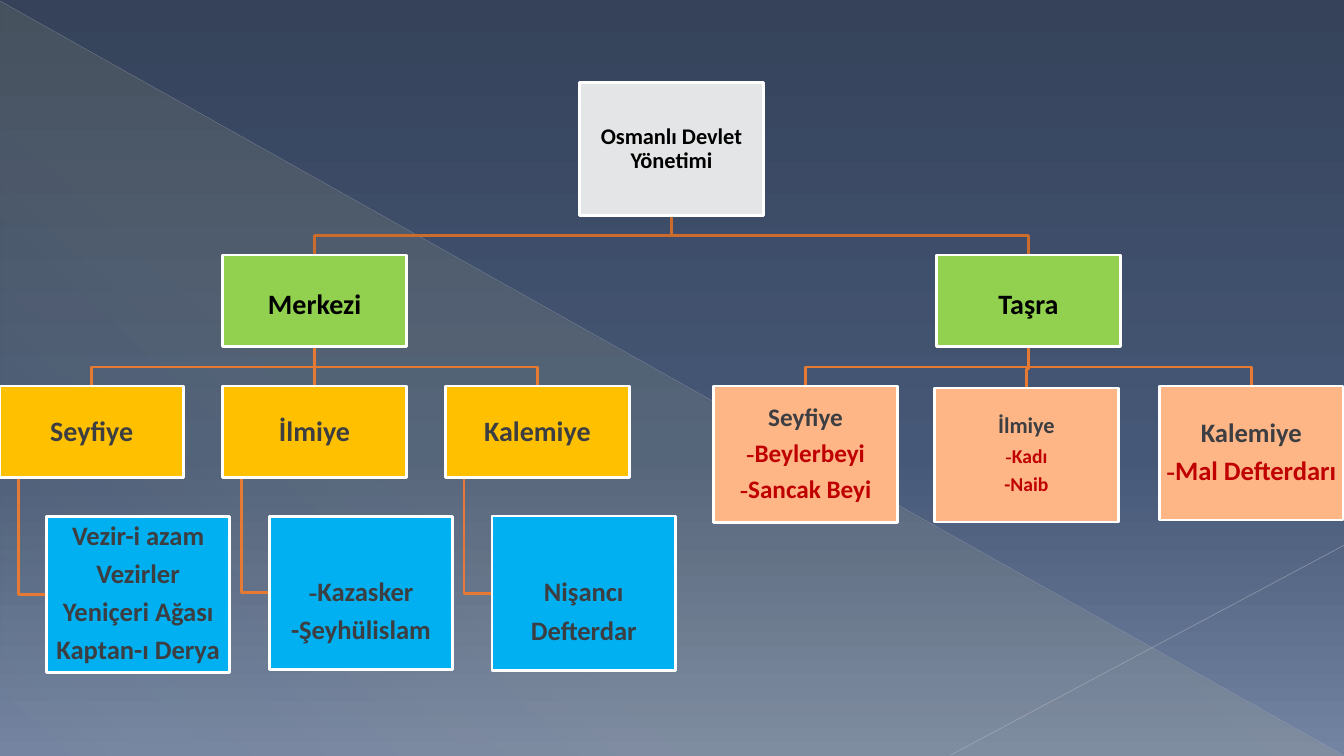
from lxml.etree import SubElement
from pptx import Presentation
from pptx.dml.color import RGBColor
from pptx.enum.shapes import MSO_CONNECTOR, MSO_SHAPE
from pptx.enum.text import MSO_ANCHOR, PP_ALIGN
from pptx.oxml.ns import qn
from pptx.util import Inches, Pt

THEME = {
    "font": "Calibri", "dash_font": "Times New Roman",
    "root": "E4E5E6", "branch": "92D050", "central": "FFC000",
    "office": "00B0F0", "province": "FEB687",
    "black": "000000", "grey": "3C3E42", "red": "C00000", "white": "FFFFFF",
    "trunk": "CB6B2C", "link": "E77A32", "line": 2,
    "sizes": {"root": 16, "unit": 20, "office": 19},
    "sky": [(0, "35425A", 100), (60, "465877", 100), (100, "7383A2", 100)],
    "beam": [(0, "FFF39D", 10), (70, "FFF39D", 8), (100, "FFF39D", 1)],
}
W, H = 13.33, 7.5
BOX_W, BOX_H, STEP = 1.82, 0.91, 2.21
BRANCH_Y, UNIT_Y, OFFICE_Y = 2.53, 3.83, 5.12
LEFT, RIGHT, OFFICE_X = 0, 7.08, 0.46
ROOT_X, ROOT_Y, ROOT_H = 5.75, 0.82, 1.32


def set_gradient(fill, element, stops, angle):
    """Fill with (position, colour, opacity) stops in percent."""
    fill.gradient()
    fill.gradient_angle = angle
    stop_list = element.find(".//" + qn("a:gsLst"))
    for old in list(stop_list):
        stop_list.remove(old)
    for pos, color, opacity in stops:
        gs = SubElement(stop_list, qn("a:gs"), pos=str(pos * 1000))
        clr = SubElement(gs, qn("a:srgbClr"), val=color)
        SubElement(clr, qn("a:alpha"), val=str(opacity * 1000))


def add_link(shapes, points, color):
    path = shapes.build_freeform(*[Inches(v) for v in points[0]])
    path.add_line_segments([(Inches(x), Inches(y)) for x, y in points[1:]], close=False)
    sp = path.convert_to_shape()
    sp.shadow.inherit = False
    sp.fill.background()
    sp.line.color.rgb = RGBColor.from_string(color)
    sp.line.width = Pt(THEME["line"])


prs = Presentation()
prs.slide_width, prs.slide_height = Inches(W), Inches(H)
s = prs.slides.add_slide(prs.slide_layouts[6])

# Background: gradient, light beam and two thin diagonals
set_gradient(s.background.fill, s._element, THEME["sky"], 270)
beam = s.shapes.add_shape(MSO_SHAPE.RIGHT_TRIANGLE, Inches(0.01), Inches(0.02),
                          Inches(13.31), Inches(7.48))
beam.shadow.inherit = False
beam.line.fill.background()
set_gradient(beam.fill, beam._element, THEME["beam"], 227)

for ends, color, width, opacity in [((0, 0.01, 13.32, 7.49), "BABDC4", 0.39, 35),
                                    ((W, 5.41, 9.43, 7.49), "C1C4CA", 0.47, 45)]:
    line = s.shapes.add_connector(MSO_CONNECTOR.STRAIGHT, *[Inches(v) for v in ends])
    line.line.color.rgb = RGBColor.from_string(color)
    line.line.width = Pt(width)
    clr = line._element.spPr.find(".//" + qn("a:srgbClr"))
    SubElement(clr, qn("a:alpha"), val=str(opacity * 1000))
    SubElement(line._element.spPr, qn("a:effectLst"))

# Boxes: left, top, height, fill, text colour, top inset, (size, text) lines.
# A "|" ends a leading dash set in the dash font.
size = THEME["sizes"]
boxes = [(ROOT_X, ROOT_Y, ROOT_H, "root", "black", 0.01,
          [(size["root"], "Osmanlı Devlet Yönetimi")])]
for start, name in [(LEFT, "Merkezi"), (RIGHT, "Taşra")]:
    boxes.append((start + STEP, BRANCH_Y, BOX_H, "branch", "black", 0.1,
                  [(size["unit"], name)]))
for col, name in enumerate(["Seyfiye", "İlmiye", "Kalemiye"]):
    boxes.append((LEFT + col * STEP, UNIT_Y, BOX_H, "central", "grey", 0.01,
                  [(size["unit"], name)]))
offices = [
    (1.55, 0.01, ["Vezir-i azam", "Vezirler", "Yeniçeri Ağası", "Kaptan-ı Derya"]),
    (1.52, 0.39, ["-|Kazasker", "-Şeyhülislam"]),
    (1.53, 0.39, ["Nişancı", "Defterdar"]),
]
for col, (height, inset, names) in enumerate(offices):
    boxes.append((OFFICE_X + col * STEP, OFFICE_Y, height, "office", "grey", inset,
                  [(size["office"], name) for name in names]))
provinces = [
    (0, 0, 1.35, [(18, "Seyfiye"), (18, "-|Beylerbeyi"), (18, "-|Sancak Beyi")]),
    (-0.02, 0.02, 1.33, [(16, "İlmiye"), (14, "-|Kadı"), (14, "-Naib")]),
    (0, 0, 1.33, [(19, "Kalemiye"), (19, "-|Mal Defterdarı")]),
]
for col, (dx, dy, height, lines) in enumerate(provinces):
    boxes.append((RIGHT + col * STEP + dx, UNIT_Y + dy, height, "province", "grey",
                  0.01, lines))

# Links: down, across, down between levels; down, across to the offices
root_mid, root_end = ROOT_X + BOX_W / 2, ROOT_Y + ROOT_H
branch_end, unit_end = BRANCH_Y + BOX_H, UNIT_Y + BOX_H
for start in (RIGHT, LEFT):
    mid = start + STEP + BOX_W / 2
    for col in range(3):
        dx, dy = provinces[col][:2] if start == RIGHT else (0, 0)
        end = start + col * STEP + BOX_W / 2 + dx
        bend = branch_end + 0.2 + dy
        add_link(s.shapes, [(mid, branch_end), (mid, bend), (end, bend),
                            (end, UNIT_Y + dy)], THEME["link"])
    bend = root_end + 0.2
    add_link(s.shapes, [(root_mid, root_end), (root_mid, bend), (mid, bend),
                        (mid, BRANCH_Y)], THEME["trunk"])
for col, office in enumerate(offices):
    x, y = LEFT + col * STEP + BOX_W / 10, OFFICE_Y + office[0] / 2
    add_link(s.shapes, [(x, unit_end), (x, y), (OFFICE_X + col * STEP, y)], THEME["link"])

for left, top, height, fill, color, inset, lines in boxes:
    sp = s.shapes.add_shape(MSO_SHAPE.RECTANGLE, Inches(left), Inches(top),
                            Inches(BOX_W), Inches(height))
    sp.shadow.inherit = False
    sp.fill.solid()
    sp.fill.fore_color.rgb = RGBColor.from_string(THEME[fill])
    sp.line.color.rgb = RGBColor.from_string(THEME["white"])
    sp.line.width = Pt(THEME["line"])
    tf = sp.text_frame
    tf.word_wrap = True
    tf.vertical_anchor = MSO_ANCHOR.MIDDLE
    tf.margin_left = tf.margin_right = tf.margin_bottom = Inches(0.01)
    tf.margin_top = Inches(inset)
    for i, (pt, text) in enumerate(lines):
        p = tf.add_paragraph() if i else tf.paragraphs[0]
        p.alignment = PP_ALIGN.CENTER
        p.line_spacing = 0.9
        p.space_after = Pt(0.35 * pt)
        p.font.name, p.font.size, p.font.bold = THEME["font"], Pt(pt), True
        shade = "red" if fill == "province" and i else color
        p.font.color.rgb = RGBColor.from_string(THEME[shade])
        dash, _, name = text.rpartition("|")
        if dash:
            r = p.add_run()
            r.text = dash
            r.font.name = THEME["dash_font"]
        p.add_run().text = name

prs.save("out.pptx")
